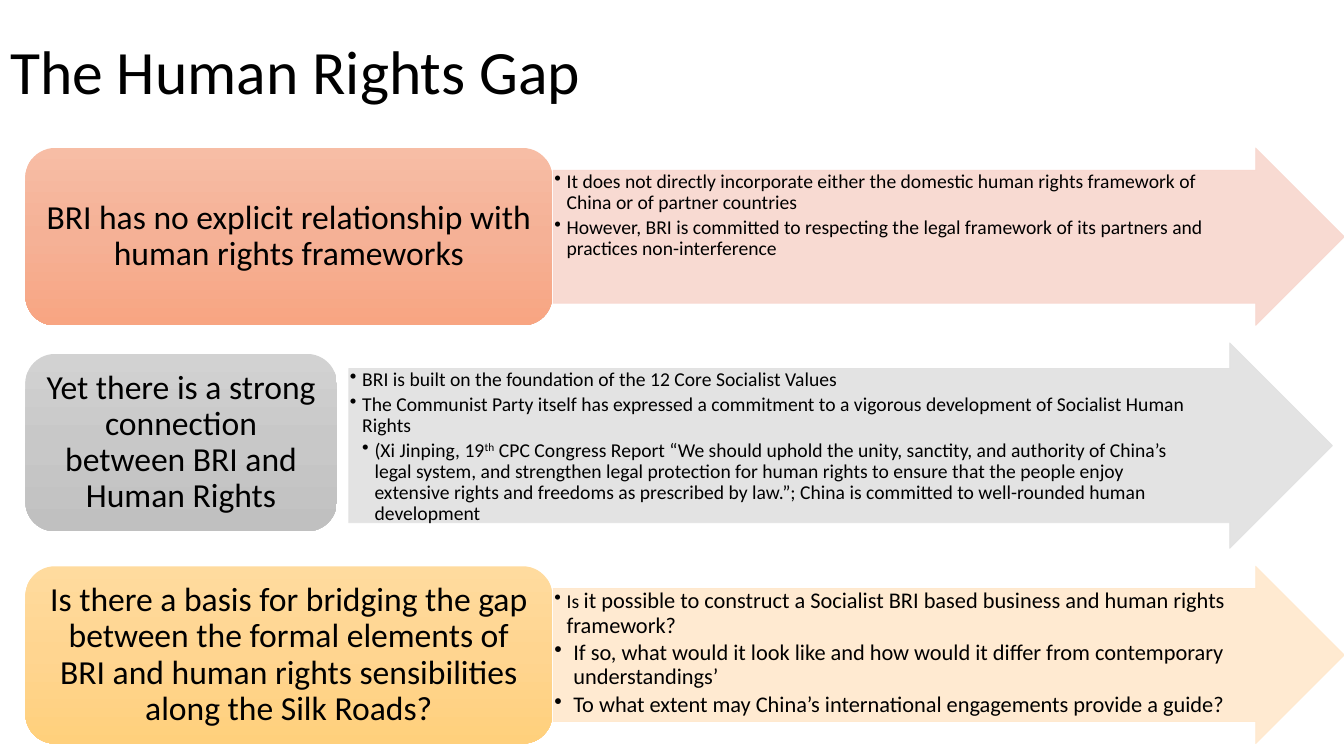
from copy import deepcopy

from pptx import Presentation
from pptx.dml.color import RGBColor
from pptx.enum.shapes import MSO_SHAPE
from pptx.enum.text import MSO_ANCHOR, MSO_AUTO_SIZE, PP_ALIGN
from pptx.oxml.ns import qn
from pptx.oxml.xmlchemy import OxmlElement
from pptx.util import Cm, Pt

ROUNDED, ARROW = MSO_SHAPE.ROUNDED_RECTANGLE, MSO_SHAPE.RIGHT_ARROW
TOP, MIDDLE = MSO_ANCHOR.TOP, MSO_ANCHOR.MIDDLE
LEFT, CENTER = PP_ALIGN.LEFT, PP_ALIGN.CENTER

COLORS = {
    "text": "000000",
    "coral": ("F7BDA5", "F5B196", "F8A582"), "coral pale": "F8D7CE",
    "grey": ("D2D2D2", "C8C8C8", "C0C0C0"), "grey pale": "E1E1E1",
    "amber": ("FFDB9E", "FFD590", "FFD07C"), "amber pale": "FFE8CC",
}
BOX_LEFT, BOX_HEIGHT = 0.64, 4.47
HANG, WIDE_HANG = 0.31, 0.48

# Each point: level, indent, hanging indent, then spans of (text, size, raised)
ROWS = [
    {"color": "coral", "box": (3.73, 13.28), "arrow": (13.94, 3.73, 19.94, 4.47),
     "claim": "BRI has no explicit relationship with human rights frameworks",
     "points": [
         (1, HANG, HANG, [("It does not directly incorporate either the domestic human rights "
                           "framework of China or of partner countries", 14, False)]),
         (1, HANG, HANG, [("However, BRI is committed to respecting the legal framework of its "
                           "partners and practices non-interference", 14, False)]),
     ]},
    {"color": "grey", "box": (8.92, 7.85), "arrow": (8.79, 8.64, 24.79, 5.18),
     "claim": "Yet there is a strong connection between BRI and Human Rights",
     "points": [
         (1, HANG, HANG, [("BRI is built on the foundation of the 12 Core Socialist Values",
                           14, False)]),
         (1, HANG, HANG, [("The Communist Party itself has expressed a commitment to a vigorous "
                           "development of Socialist Human Rights", 14, False)]),
         (2, 2 * HANG, HANG, [
             ("(Xi Jinping, 19", 14, False), ("th", 14, True),
             (" CPC Congress Report “We should uphold the unity, sanctity, and authority of "
              "China’s legal system, and strengthen legal protection for human rights to ensure "
              "that the people enjoy extensive rights and freedoms as prescribed by law.”; "
              "China is committed to well-rounded human development", 14, False)]),
     ]},
    {"color": "amber", "box": (14.27, 13.28), "arrow": (13.94, 14.27, 19.94, 4.47),
     "claim": "Is there a basis for bridging the gap between the formal elements of BRI and "
              "human rights sensibilities along the Silk Roads?",
     "points": [
         (1, HANG, HANG, [("Is ", 14, False),
                          ("it possible to construct a Socialist BRI based business and human "
                           "rights framework?", 16, False)]),
         (1, WIDE_HANG, WIDE_HANG, [("If so, what would it look like and how would it differ "
                                     "from contemporary understandings’", 16, False)]),
         (1, WIDE_HANG, WIDE_HANG, [("To what extent may China’s international engagements "
                                     "provide a guide?", 16, False)]),
     ]},
]


def write_paragraph(para, spans, align=LEFT, level=0, indent=0, hang=0, after=0):
    para.alignment, para.level = align, level
    para.line_spacing, para.space_before, para.space_after = 0.9, Pt(0), Pt(after)
    if hang:
        properties = para._p.get_or_add_pPr()
        properties.set("marL", str(Cm(indent)))
        properties.set("indent", str(-Cm(hang)))
        bullet = OxmlElement("a:buChar")
        bullet.set("char", "•")
        properties.append(bullet)
    for text, size, raised in spans:
        span = para.add_run()
        span.text = text
        span.font.name, span.font.size = "Calibri", Pt(size)
        span.font.color.rgb = RGBColor.from_string(COLORS["text"])
        if raised:
            span.font._element.set("baseline", "30000")


def add_panel(page, preset, left, top, width, height, anchor):
    """Add a shadowless shape whose wrapped text has the given anchor."""
    panel = page.shapes.add_shape(preset, Cm(left), Cm(top), Cm(width), Cm(height))
    panel.shadow.inherit = False
    panel.text_frame.word_wrap = True
    panel.text_frame.vertical_anchor = anchor
    return panel


deck = Presentation()
deck.slide_width, deck.slide_height = Cm(33.87), Cm(19.05)
page = deck.slides.add_slide(deck.slide_layouts[5])

title = page.shapes.title
title.left, title.top, title.width, title.height = Cm(0), Cm(0.05), Cm(29.21), Cm(3.68)
title.text_frame.auto_size = MSO_AUTO_SIZE.NONE
title.text_frame.vertical_anchor = MIDDLE
write_paragraph(title.text_frame.paragraphs[0], [("The Human Rights Gap", 44, False)])

for row in ROWS:
    arrow = add_panel(page, ARROW, *row["arrow"], TOP)
    arrow.adjustments[0], arrow.adjustments[1] = 0.75, 0.5
    pale = RGBColor.from_string(COLORS[row["color"] + " pale"])
    arrow.fill.solid()
    arrow.fill.fore_color.rgb = pale
    arrow.line.color.rgb = pale
    arrow.line.width = Pt(0.5)
    for color in arrow._element.spPr.iter(qn("a:srgbClr")):
        alpha = OxmlElement("a:alpha")
        alpha.set("val", "90000")
        color.append(alpha)

    frame = arrow.text_frame
    frame.margin_left = frame.margin_top = frame.margin_bottom = Cm(0.03)
    frame.margin_right = Cm(row["arrow"][3] / 4)  # text ends halfway along the head
    for number, (level, indent, hang, spans) in enumerate(row["points"]):
        para = frame.add_paragraph() if number else frame.paragraphs[0]
        write_paragraph(para, spans, level=level, indent=indent, hang=hang, after=2.5)

    top, width = row["box"]
    box = add_panel(page, ROUNDED, BOX_LEFT, top, width, BOX_HEIGHT, MIDDLE)
    box.line.fill.background()
    box.fill.gradient()
    box.fill.gradient_angle = 270
    first_stop = box._element.spPr.find(".//" + qn("a:gs"))
    first_stop.addnext(deepcopy(first_stop))
    for number, (stop, color) in enumerate(zip(box.fill.gradient_stops, COLORS[row["color"]])):
        stop.position = number / 2
        stop.color.rgb = RGBColor.from_string(color)
    write_paragraph(box.text_frame.paragraphs[0], [(row["claim"], 24, False)], align=CENTER)

deck.save("out.pptx")
